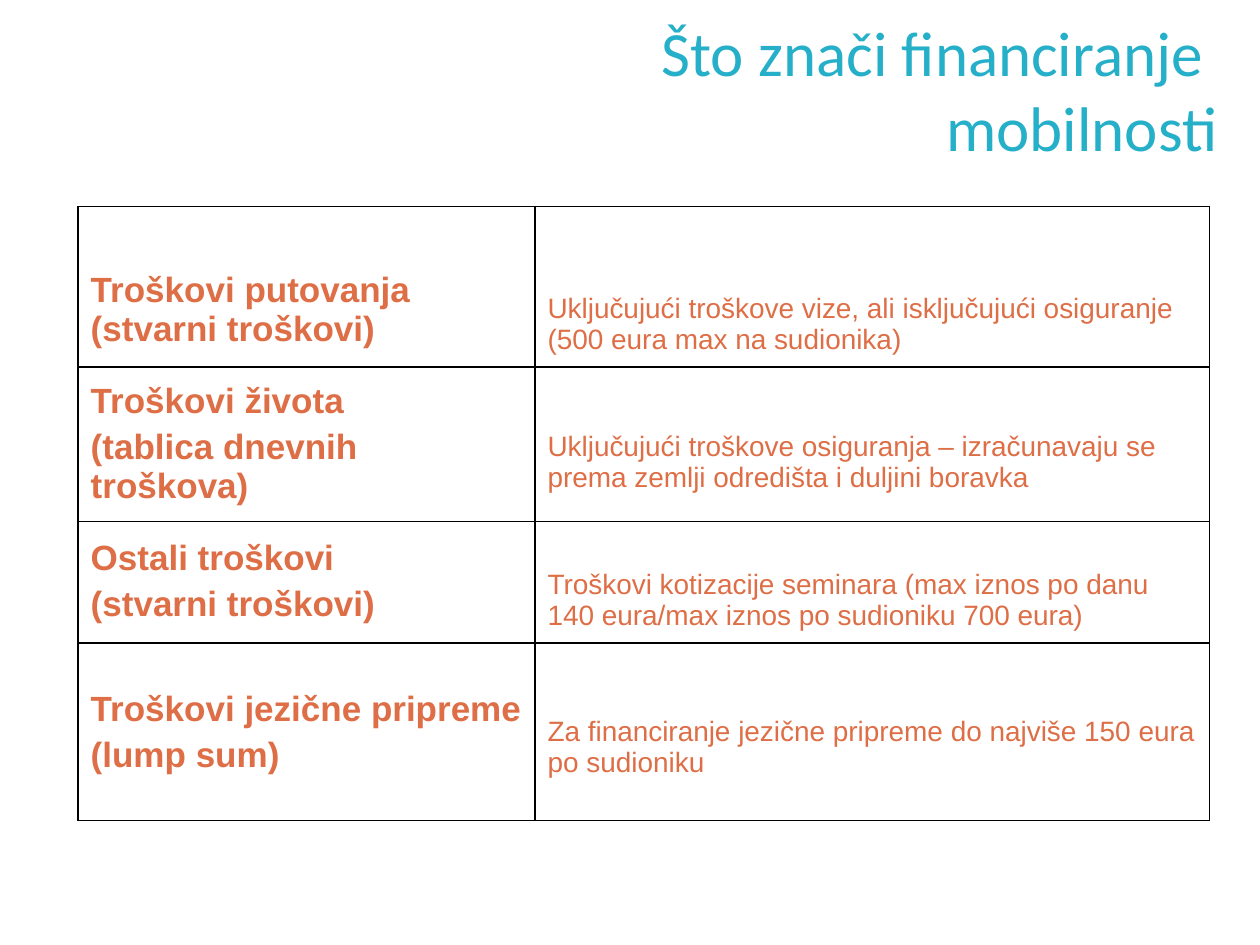
from dataclasses import dataclass

from lxml.etree import SubElement
from pptx import Presentation
from pptx.dml.color import RGBColor
from pptx.enum.text import MSO_ANCHOR, PP_ALIGN
from pptx.oxml.ns import qn
from pptx.util import Inches, Pt


@dataclass(frozen=True)
class Theme:
    """Colours, fonts and type sizes of the slide."""
    title_color: str = "25AFC9"
    body_color: str = "DE6E46"
    border_color: str = "000000"
    title_font: str = "Calibri"
    body_font: str = "Arial"
    title_size: int = 36
    label_size: int = 20
    detail_size: int = 16


THEME = Theme()
COLUMN_WIDTHS = (3.63, 5.36)
COSTS = (
    (1.27, (0.51, ("Troškovi putovanja (stvarni troškovi)",)),
     (0.69, "Uključujući troškove vize, ali isključujući osiguranje (500 eura max na sudionika)")),
    (1.22, (0.12, ("Troškovi života", "(tablica dnevnih troškova)")),
     (0.51, "Uključujući troškove osiguranja – izračunavaju se prema zemlji odredišta i duljini boravka")),
    (0.95, (0.14, ("Ostali troškovi", "(stvarni troškovi)")),
     (0.38, "Troškovi kotizacije seminara (max iznos po danu 140 eura/max iznos po sudioniku 700 eura)")),
    (1.41, (0.37, ("Troškovi jezične pripreme", "(lump sum)")),
     (0.58, "Za financiranje jezične pripreme do najviše 150 eura po sudioniku")),
)


def write_text(text_frame, paragraphs, *, font, size, color, bold=False, align=PP_ALIGN.LEFT):
    """Fill a text frame with equally formatted paragraphs."""
    text_frame.word_wrap = True
    for index, text in enumerate(paragraphs):
        paragraph = text_frame.add_paragraph() if index else text_frame.paragraphs[0]
        paragraph.text = text
        paragraph.alignment = align
        if index:
            paragraph.space_before = Pt(size * 0.2)
        for run in paragraph.runs:
            run.font.name = font
            run.font.size = Pt(size)
            run.font.bold = bold
            run.font.color.rgb = RGBColor.from_string(color)


def style_cell(cell, top_margin):
    """Give a cell thin borders, no fill and its text offset."""
    properties = cell._tc.get_or_add_tcPr()
    for side in ("L", "R", "T", "B"):
        line = SubElement(properties, qn(f"a:ln{side}"), w=str(Pt(1)))
        fill = SubElement(line, qn("a:solidFill"))
        SubElement(fill, qn("a:srgbClr"), val=THEME.border_color)
    cell.fill.background()
    cell.vertical_anchor = MSO_ANCHOR.TOP
    cell.margin_left = cell.margin_right = Inches(0.1)
    cell.margin_top = Inches(top_margin)
    cell.margin_bottom = Inches(0.05)


def add_title(slide, left, top, width, height):
    """Place the right-aligned title in its box."""
    title = slide.shapes.add_textbox(left, top, width, height)
    title.text_frame.vertical_anchor = MSO_ANCHOR.MIDDLE
    write_text(title.text_frame, ["Što znači financiranje \vmobilnosti"], font=THEME.title_font,
               size=THEME.title_size, color=THEME.title_color, align=PP_ALIGN.RIGHT)


def add_cost_table(slide, left, top, width, height):
    """Place the cost table, sharing the box among its columns and rows."""
    table = slide.shapes.add_table(len(COSTS), len(COLUMN_WIDTHS), left, top, width, height).table
    table.first_row = table.horz_banding = False
    for column, share in zip(table.columns, COLUMN_WIDTHS):
        column.width = int(width * share / sum(COLUMN_WIDTHS))
    total = sum(cost[0] for cost in COSTS)
    for index, (share, (label_top, label), (detail_top, detail)) in enumerate(COSTS):
        table.rows[index].height = int(height * share / total)
        label_cell, detail_cell = table.cell(index, 0), table.cell(index, 1)
        style_cell(label_cell, label_top)
        style_cell(detail_cell, detail_top)
        write_text(label_cell.text_frame, label, font=THEME.body_font,
                   size=THEME.label_size, color=THEME.body_color, bold=True)
        write_text(detail_cell.text_frame, [detail], font=THEME.body_font,
                   size=THEME.detail_size, color=THEME.body_color)


def main():
    """Build and save the slide."""
    presentation = Presentation()
    presentation.slide_width, presentation.slide_height = Inches(10), Inches(7.5)
    slide = presentation.slides.add_slide(presentation.slide_layouts[6])
    add_title(slide, Inches(2.03), Inches(0.16), Inches(7.73), Inches(1.09))
    add_cost_table(slide, Inches(0.62), Inches(1.64), Inches(8.98), Inches(4.85))
    presentation.save("out.pptx")


if __name__ == "__main__":
    main()
